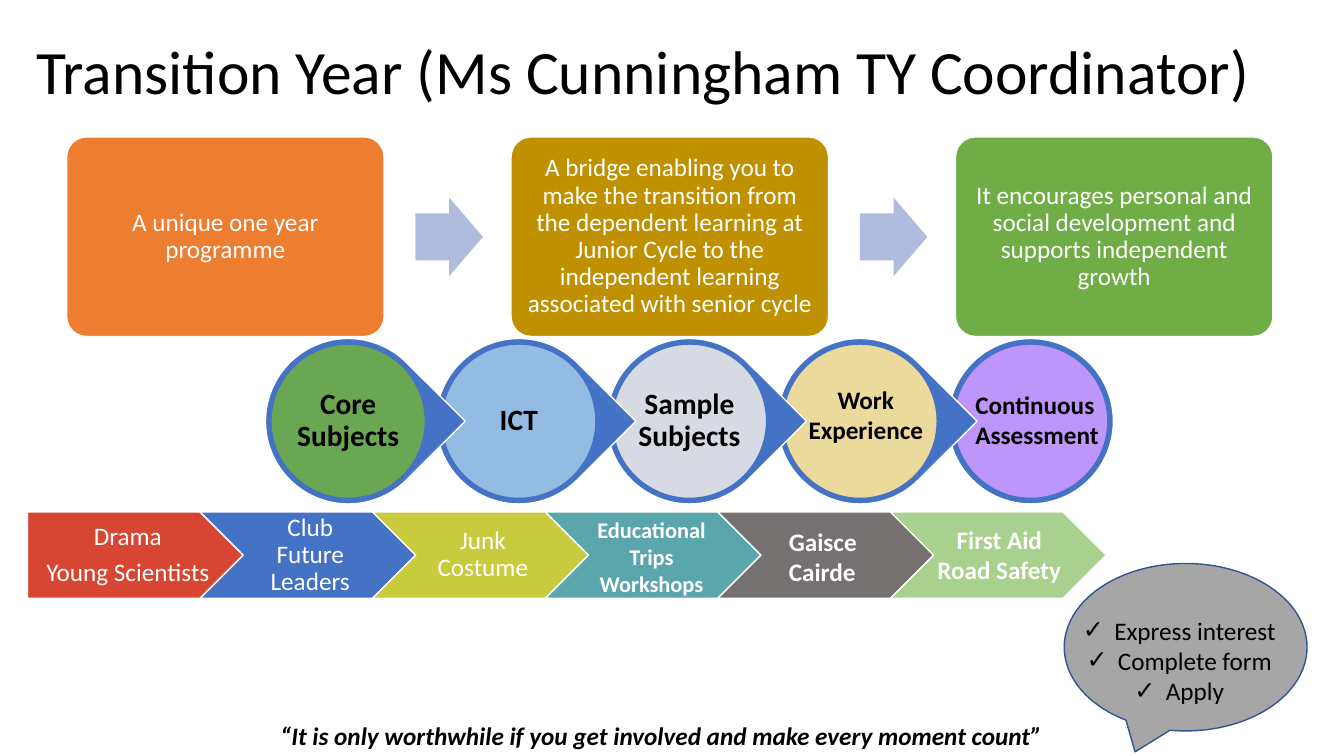
from dataclasses import dataclass

from lxml import etree
from pptx import Presentation
from pptx import util as u
from pptx.dml.color import RGBColor
from pptx.enum import shapes, text
from pptx.oxml.ns import qn

FONT = "Calibri"
HUES = {
    "black": "000000", "white": "FFFFFF", "blue": "4472C4", "orange": "ED7D31",
    "gold": "BF9000", "green": "70AD47", "pale": "B0BCDE", "sky": "9DC3E6",
    "mist": "E7E6E6", "cream": "FFE699", "violet": "CC99FF", "red": "D64632",
    "lime": "C8CB3D", "teal": "5BA5AD", "slate": "767171", "mint": "A9D18E",
    "grey": "A6A6A6", "navy": "325491",
}
KIND = shapes.MSO_SHAPE
LEFT, MID = text.PP_ALIGN.LEFT, text.PP_ALIGN.CENTER


@dataclass
class Box:
    """A place on the slide, in centimetres."""
    x: float
    y: float
    w: float
    h: float

    def spans(self) -> list[u.Cm]:
        return [u.Cm(n) for n in (self.x, self.y, self.w, self.h)]


@dataclass
class Style:
    size: float = 18
    hue: str = "white"
    bold: bool = False
    slant: bool = False
    align: text.PP_ALIGN = MID
    tight: bool = False
    tick: bool = False


@dataclass
class Step:
    """One link of a chain: its fill and its lines of text."""
    hue: str
    lines: tuple[str, ...] = ()


@dataclass
class Label:
    box: Box
    lines: tuple[str, ...]
    style: Style


def rgb(hue: str) -> RGBColor:
    return RGBColor.from_string(HUES[hue])


def add_tick(para) -> None:
    props = para._p.get_or_add_pPr()
    props.set("marL", str(u.Cm(0.79)))
    props.set("indent", str(-u.Cm(0.79)))
    etree.SubElement(props, qn("a:buFont")).set("typeface", "Arial")
    etree.SubElement(props, qn("a:buChar")).set("char", "✓")


def write(frame, lines: tuple[str, ...], style: Style) -> None:
    frame.word_wrap = True
    for i, line in enumerate(lines):
        para = frame.add_paragraph() if i else frame.paragraphs[0]
        para.alignment = style.align
        if style.tight:
            para.line_spacing = 0.9
            para.space_after = u.Pt(0.35 * style.size)
        if style.tick:
            add_tick(para)
        run = para.add_run()
        run.text = line
        font = run.font
        font.name, font.size = FONT, u.Pt(style.size)
        font.bold, font.italic = style.bold, style.slant
        font.color.rgb = rgb(style.hue)


def draw(slide, kind, box: Box, fill: str, line: str | None = "white"):
    shape = slide.shapes.add_shape(kind, *box.spans())
    shape.shadow.inherit = False
    shape.fill.solid()
    shape.fill.fore_color.rgb = rgb(fill)
    if line:
        shape.line.color.rgb = rgb(line)
        shape.line.width = u.Pt(1)
    else:
        shape.line.fill.background()
    return shape


def fit(shape, lines: tuple[str, ...], style: Style, pads: tuple[float, ...]) -> None:
    """Write centred text inside a shape; pads are left, top, right, bottom in cm."""
    frame = shape.text_frame
    frame.vertical_anchor = text.MSO_ANCHOR.MIDDLE
    (frame.margin_left, frame.margin_top,
     frame.margin_right, frame.margin_bottom) = [u.Cm(n) for n in pads]
    write(frame, lines, style)


def add_cards(slide) -> None:
    for i, card in enumerate(CARDS):
        x = 1.68 + 11.2 * i
        shape = draw(slide, KIND.ROUNDED_RECTANGLE, Box(x, 3.45, 8, 5.03), card.hue)
        shape.adjustments[0] = 0.1
        fit(shape, card.lines, Style(tight=True), (0.18,) * 4)
        if i < len(CARDS) - 1:
            arrow = draw(slide, KIND.RIGHT_ARROW, Box(x + 8.79, 4.98, 1.7, 1.98), "pale", None)
            arrow.adjustments[0] = 0.6


def add_rings(slide) -> None:
    """Draw the chain from right to left, so each tip lies over the next ring."""
    last = len(RINGS) - 1
    for i, ring in reversed(list(enumerate(RINGS))):
        x = 6.69 + 4.3 * i
        kind = KIND.OVAL if i == last else KIND.TEAR
        back = draw(slide, kind, Box(x, 8.53, 4.17, 4.17), "blue")
        back.rotation = 0 if i == last else 45
        disc = draw(slide, KIND.OVAL, Box(x + 0.14, 8.67, 3.89, 3.89), ring.hue, "blue")
        tint = disc.element.spPr.find(qn("a:solidFill"))[0]
        etree.SubElement(tint, qn("a:alpha")).set("val", "90000")
        if ring.lines:
            fit(disc, ring.lines, Style(21, "black", True, tight=True), (0.08,) * 4)


def add_band(slide) -> None:
    for i, part in enumerate(BAND):
        kind = KIND.CHEVRON if i else KIND.PENTAGON
        shape = draw(slide, kind, Box(0.69 + 4.35 * i, 12.9, 5.44, 2.18), part.hue)
        if part.lines:
            fit(shape, part.lines, Style(tight=True), (0.2 if i else 0.25, 0.13, 0.08, 0.13))


def add_label(slide, label: Label) -> None:
    write(slide.shapes.add_textbox(*label.box.spans()).text_frame, label.lines, label.style)


def add_title(slide) -> None:
    title = slide.shapes.title
    title.left, title.top, title.width, title.height = Box(0.66, 0.05, 33, 3.68).spans()
    frame = title.text_frame
    frame.auto_size = text.MSO_AUTO_SIZE.NONE
    frame.vertical_anchor = text.MSO_ANCHOR.MIDDLE
    write(frame, ("Transition Year (Ms Cunningham TY Coordinator)",),
          Style(44, "black", align=LEFT))
    frame.paragraphs[0].line_spacing = 0.9


CARDS = [
    Step("orange", ("A unique one year programme",)),
    Step("gold", ("A bridge enabling you to make the transition from the dependent learning "
                  "at Junior Cycle to the independent learning associated with senior cycle",)),
    Step("green", ("It encourages personal and social development and supports "
                   "independent growth",)),
]
RINGS = [
    Step("green", ("Core Subjects",)), Step("sky", ("ICT",)),
    Step("mist", ("Sample Subjects",)), Step("cream"), Step("violet"),
]
BAND = [
    Step("red", ("Drama", "Young Scientists")), Step("blue", ("Club Future Leaders",)),
    Step("lime", ("Junk Costume",)), Step("teal"), Step("slate"), Step("mint"),
]
DARK = Style(hue="black", bold=True)
LABELS = [
    Label(Box(19.84, 9.55, 3.96, 1.8), ("Work Experience",), DARK),
    Label(Box(24.33, 9.68, 3.73, 1.8), ("Continuous Assessment",),
          Style(hue="black", bold=True, align=LEFT)),
    Label(Box(5.99, 18.03, 21.36, 1.02),
          ("“It is only worthwhile if you get involved and make every moment count”",),
          Style(hue="black", bold=True, slant=True)),
    Label(Box(23.24, 13.08, 3.89, 1.8), ("First Aid", "Road Safety"), Style(bold=True)),
    Label(Box(19.63, 13.13, 2.79, 1.8), ("Gaisce", "Cairde"), Style(bold=True, align=LEFT)),
    Label(Box(14.4, 12.88, 4.04, 2.31), ("Educational Trips", "Workshops"),
          Style(16, bold=True)),
    Label(Box(26.47, 15.37, 6.5, 2.57), ("Express interest", "Complete form", "Apply"),
          Style(hue="black", tick=True)),
]


def main() -> None:
    deck = Presentation()
    deck.slide_width, deck.slide_height = u.Cm(33.87), u.Cm(19.05)
    slide = deck.slides.add_slide(deck.slide_layouts[5])
    add_title(slide)
    add_cards(slide)
    add_rings(slide)
    add_band(slide)
    draw(slide, KIND.OVAL_CALLOUT, Box(26.82, 14.2, 6.12, 4.22), "grey", "navy")
    for label in LABELS:
        add_label(slide, label)
    deck.save("out.pptx")


if __name__ == "__main__":
    main()
